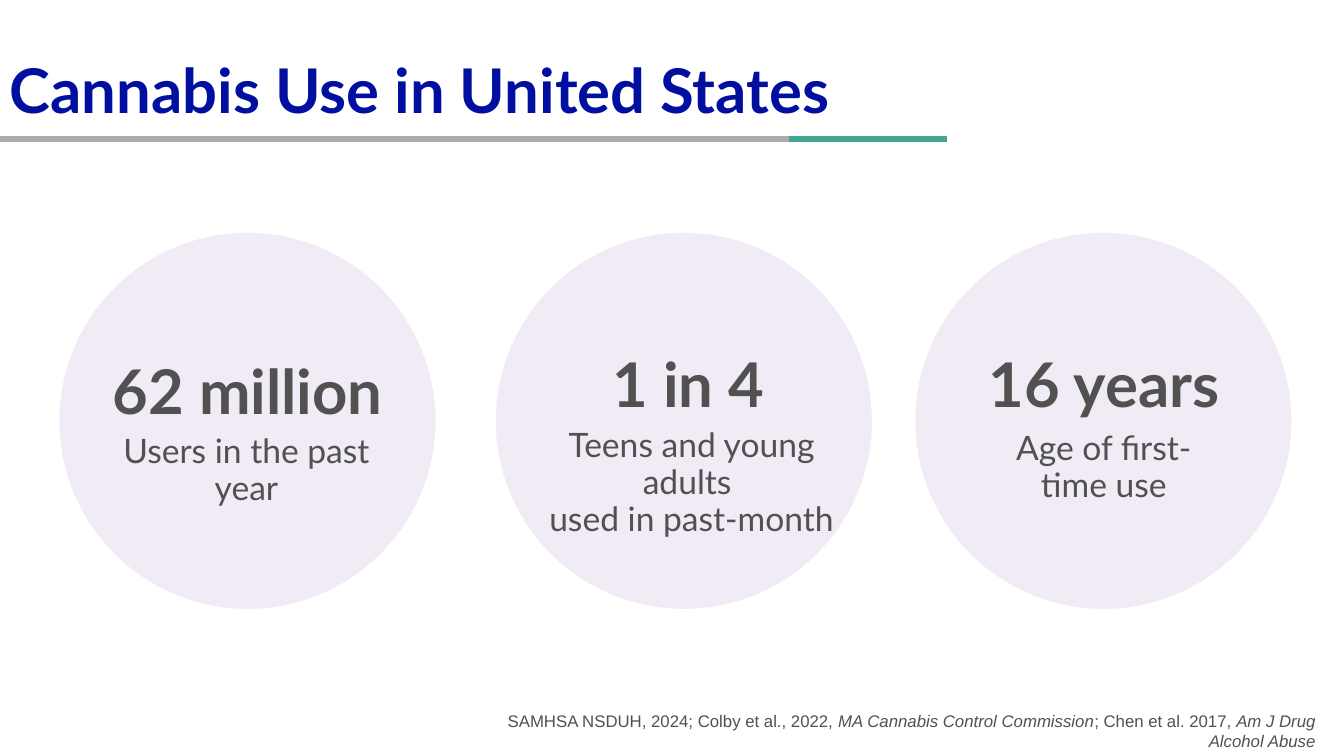
import pptx
import pptx.util
import pptx.dml.color
import pptx.enum.shapes
import pptx.enum.text
import pptx.oxml
import pptx.oxml.ns
from pptx.util import Pt

COLORS = {
    "title": "000F9F",
    "text": "515151",
    "circle": "8E6AB4",
    "gray": "AFABAB",
    "teal": "44A594",
}
ALIGN = pptx.enum.text.PP_ALIGN
CIRCLE_TOP, CIRCLE_SIZE = 166.3, 268.6
RULE_Y = 99.4

# circle left, (figure, its box), (caption lines, their box)
STATS = [
    (42.5, ("62 million", (56.9, 249.1, 240.5, 56)),
     (["Users in the past year"], (86.4, 309.6, 179.3, 27))),
    (354.2, ("1 in 4", (349.2, 244.1, 285.1, 56)),
     (["Teens and young adults ", "used in past-month"], (391, 305.3, 205.9, 64))),
    (653.8, ("16 years", (689.8, 244.1, 198, 67)),
     (["Age of first-time use"], (715, 307.4, 146.9, 32))),
]
CITATION = [
    ("SAMHSA NSDUH, 2024; Colby et al., 2022, ", False),
    ("MA Cannabis Control Commission", True),
    ("; Chen et al. 2017, ", False),
    ("Am J Drug Alcohol Abuse", True),
]


def rgb(name):
    return pptx.dml.color.RGBColor.from_string(COLORS[name])


def add_text(s, box, paragraphs, size, font="Lato", color="text", bold=False,
             align=ALIGN.CENTER, spacing=None, wrap=False, inset=(0, 0)):
    """Add a text box; each paragraph is a list of (text, italic) runs."""
    sp = s.shapes.add_textbox(*map(Pt, box))
    tf = sp.text_frame
    tf.word_wrap = wrap
    tf.margin_left = tf.margin_right = Pt(inset[0])
    tf.margin_top = tf.margin_bottom = Pt(inset[1])
    for i, runs in enumerate(paragraphs):
        p = tf.add_paragraph() if i else tf.paragraphs[0]
        p.alignment = align
        p.line_spacing = spacing
        for text, italic in runs:
            r = p.add_run()
            r.text = text
            r.font.name = font
            r.font.size = Pt(size)
            r.font.bold = bold
            r.font.italic = italic
            r.font.color.rgb = rgb(color)


def add_circle(s, left):
    sp = s.shapes.add_shape(pptx.enum.shapes.MSO_SHAPE.OVAL, Pt(left),
                            Pt(CIRCLE_TOP), Pt(CIRCLE_SIZE), Pt(CIRCLE_SIZE))
    sp.shadow.inherit = False
    sp.fill.solid()
    sp.fill.fore_color.rgb = rgb("circle")
    sp.line.fill.background()
    clr = sp.fill._xPr.find(".//" + pptx.oxml.ns.qn("a:srgbClr"))
    clr.append(pptx.oxml.parse_xml(
        f'<a:alpha {pptx.oxml.ns.nsdecls("a")} val="13000"/>'))


def add_rule(s, x1, x2, color):
    line = s.shapes.add_connector(pptx.enum.shapes.MSO_CONNECTOR.STRAIGHT,
                                  Pt(x1), Pt(RULE_Y), Pt(x2), Pt(RULE_Y))
    line.line.color.rgb = rgb(color)
    line.line.width = Pt(4.5)
    line._element.spPr.append(pptx.oxml.parse_xml(
        f'<a:effectLst {pptx.oxml.ns.nsdecls("a")}/>'))


def main():
    prs = pptx.Presentation()
    prs.slide_width, prs.slide_height = Pt(960), Pt(540)
    s = prs.slides.add_slide(prs.slide_layouts[6])

    add_text(s, (0, 39.6, 858.2, 69.8), [[("Cannabis Use in United States", False)]],
             44, color="title", bold=True, align=ALIGN.LEFT, spacing=0.9,
             wrap=True, inset=(7.2, 3.6))
    for left, (figure, figure_box), (caption, caption_box) in STATS:
        add_circle(s, left)
        add_text(s, figure_box, [[(figure, False)]], 44, bold=True, spacing=Pt(55.5))
        add_text(s, caption_box, [[(line, False)] for line in caption], 24,
                 spacing=Pt(26.5))
    add_text(s, (344.2, 504, 602.6, 21.6), [CITATION], 12, font="Arial",
             align=ALIGN.RIGHT, wrap=True, inset=(7.2, 3.6))
    add_rule(s, 563.8, 676.1, "teal")
    add_rule(s, 0, 563.8, "gray")

    prs.save("out.pptx")


if __name__ == "__main__":
    main()
